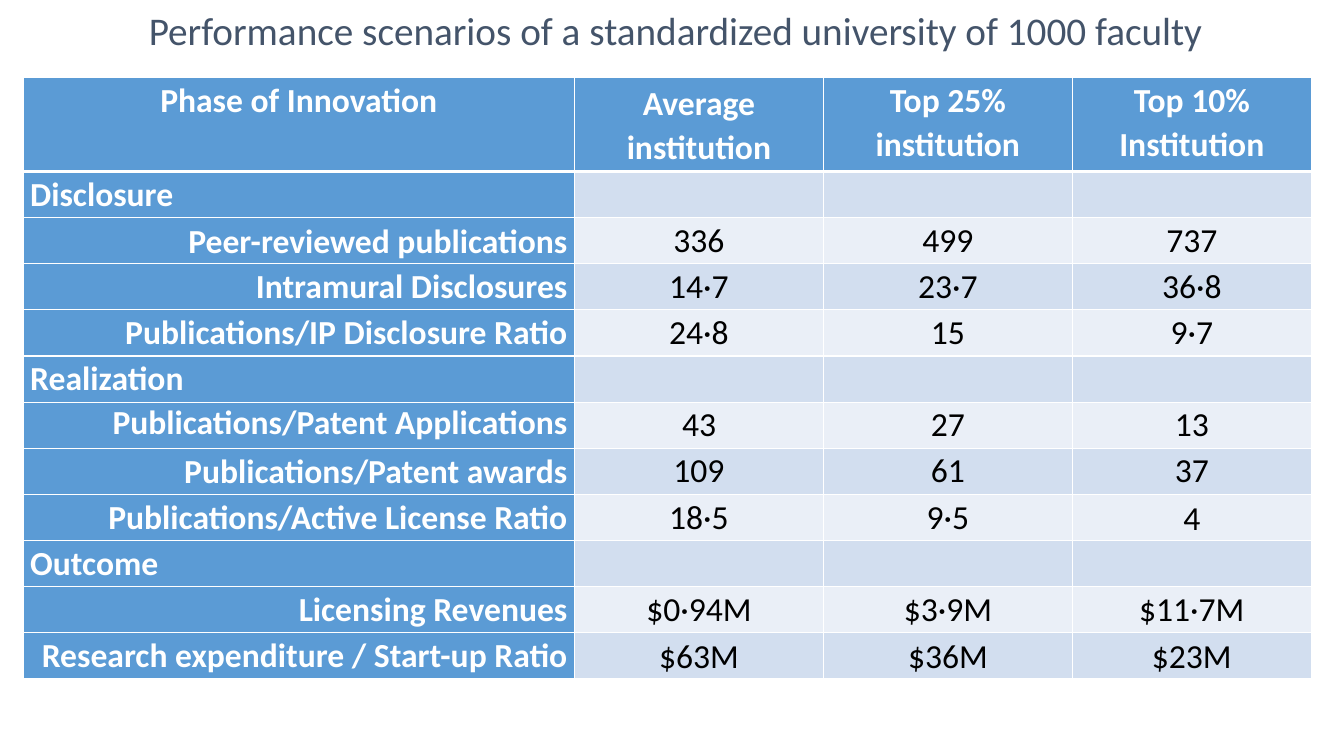
from dataclasses import dataclass

from lxml.etree import SubElement
from pptx import Presentation
from pptx.dml.color import RGBColor
from pptx.enum.text import MSO_ANCHOR as Anchor, MSO_AUTO_SIZE as AutoSize, PP_ALIGN as Align
from pptx.oxml.ns import qn
from pptx.table import _Cell as Cell
from pptx.text.text import TextFrame
from pptx.util import Inches, Length, Pt

# Grid of tenths of an inch
SLIDE_COLUMNS, SLIDE_ROWS = 133.33, 75
TABLE_LEFT, TABLE_TOP, TABLE_HEIGHT = 2.3, 7.7, 59.7
COLUMN_WIDTHS = (54.7, 24.7, 24.7, 23.7)
HEADER_HEIGHT = 9.3
SIDE_MARGIN = 0.7

FONT = "Calibri"
WHITE, BLACK, TITLE_COLOR = "FFFFFF", "000000", "44546A"
BLUE, BANDS = "5B9BD5", ("EAEFF7", "D2DEEF")
ANCHORS = {"t": Anchor.TOP, "m": Anchor.MIDDLE}
LOOSE, SINGLE = 1.07, 1.0


@dataclass(frozen=True)
class Row:
    """One table row; anchors holds a letter per cell, t for top and m for middle."""
    label: str
    values: tuple[str, ...] = ("", "", "")
    anchors: str = "tttt"
    label_spacing: float = LOOSE
    value_spacing: float = LOOSE


@dataclass(frozen=True)
class TextStyle:
    size: float
    color: str
    bold: bool = False
    align: Align = Align.CENTER
    spacing: float | None = None


HEADER = Row("Phase of Innovation",
             ("Average institution", "Top 25% institution", "Top 10% Institution"), "tmtt")
BODY = (
    Row("Disclosure"),
    Row("Peer-reviewed publications", ("336", "499", "737"), "mttt"),
    Row("Intramural Disclosures", ("14·7", "23·7", "36·8")),
    Row("Publications/IP Disclosure Ratio", ("24·8", "15", "9·7")),
    Row("Realization"),
    Row("Publications/Patent Applications", ("43", "27", "13"), "tmmm", SINGLE, SINGLE),
    Row("Publications/Patent awards", ("109", "61", "37"), "tmmm", LOOSE, SINGLE),
    Row("Publications/Active License Ratio", ("18·5", "9·5", "4"), "tttm"),
    Row("Outcome"),
    Row("Licensing Revenues", ("$0·94M", "$3·9M", "$11·7M")),
    Row("Research expenditure / Start-up Ratio", ("$63M", "$36M", "$23M"), "tmmm"),
)


def grid(steps: float) -> Length:
    return Inches(steps / 10)


def color(value: str) -> RGBColor:
    return RGBColor.from_string(value)


def write(frame: TextFrame, text: str, style: TextStyle) -> None:
    para = frame.paragraphs[0]
    para.alignment = style.align
    if style.spacing:
        para.line_spacing = style.spacing
    span = para.add_run()
    span.text = text
    span.font.name = FONT
    span.font.size = Pt(style.size)
    span.font.bold = style.bold
    span.font.color.rgb = color(style.color)


def add_borders(cell: Cell, top: float, bottom: float) -> None:
    properties = cell._tc.get_or_add_tcPr()
    widths = {"a:lnL": 1, "a:lnR": 1, "a:lnT": top, "a:lnB": bottom}
    for place, (tag, width) in enumerate(widths.items()):
        line = SubElement(properties, qn(tag), w=str(Pt(width)))
        SubElement(SubElement(line, qn("a:solidFill")), qn("a:srgbClr"), val=WHITE)
        # Border lines come before the fill
        properties.insert(place, line)


def label_align(row: Row) -> Align:
    if row is HEADER:
        return Align.CENTER
    return Align.RIGHT if any(row.values) else Align.LEFT


def fill_row(cells: list[Cell], row: Row, index: int) -> None:
    for column, (cell, text) in enumerate(zip(cells, (row.label, *row.values))):
        is_label = column == 0
        is_blue = is_label or index == 0
        cell.fill.solid()
        cell.fill.fore_color.rgb = color(BLUE if is_blue else BANDS[index % 2])
        add_borders(cell, 3 if index == 1 else 1, 3 if index == 0 else 1)
        cell.margin_left = cell.margin_right = grid(SIDE_MARGIN)
        cell.margin_top = cell.margin_bottom = 0
        cell.vertical_anchor = ANCHORS[row.anchors[column]]
        if text:
            write(cell.text_frame, text, TextStyle(
                24, WHITE if is_blue else BLACK, is_blue,
                label_align(row) if is_label else Align.CENTER,
                row.label_spacing if is_label else row.value_spacing))


def main() -> None:
    deck = Presentation()
    deck.slide_width, deck.slide_height = grid(SLIDE_COLUMNS), grid(SLIDE_ROWS)
    page = deck.slides.add_slide(deck.slide_layouts[6])

    # Table
    rows = (HEADER, *BODY)
    table = page.shapes.add_table(
        len(rows), len(COLUMN_WIDTHS), grid(TABLE_LEFT), grid(TABLE_TOP),
        grid(sum(COLUMN_WIDTHS)), grid(TABLE_HEIGHT)).table
    for column, width in zip(table.columns, COLUMN_WIDTHS):
        column.width = grid(width)
    body_height = (TABLE_HEIGHT - HEADER_HEIGHT) / len(BODY)
    for index, (line, row) in enumerate(zip(table.rows, rows)):
        line.height = grid(body_height if index else HEADER_HEIGHT)
        fill_row(list(line.cells), row, index)

    # Title
    box = page.shapes.add_textbox(grid(3.6), grid(0.1), grid(126.8), grid(5.7))
    frame = box.text_frame
    frame.word_wrap = True
    frame.auto_size = AutoSize.SHAPE_TO_FIT_TEXT
    frame.vertical_anchor = Anchor.MIDDLE
    write(frame, "Performance scenarios of a standardized university of 1000 faculty",
          TextStyle(28, TITLE_COLOR))

    deck.save("out.pptx")


if __name__ == "__main__":
    main()
